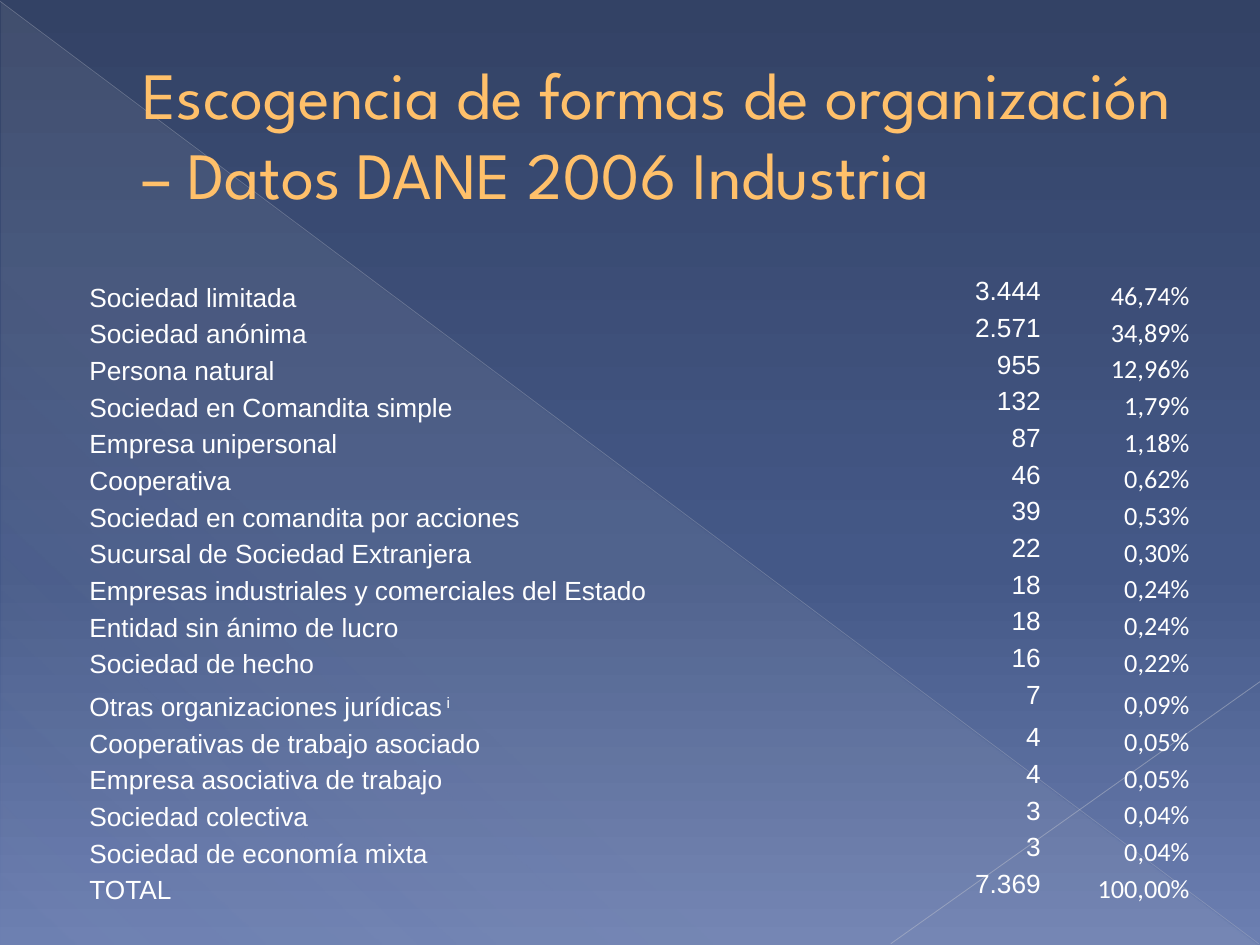
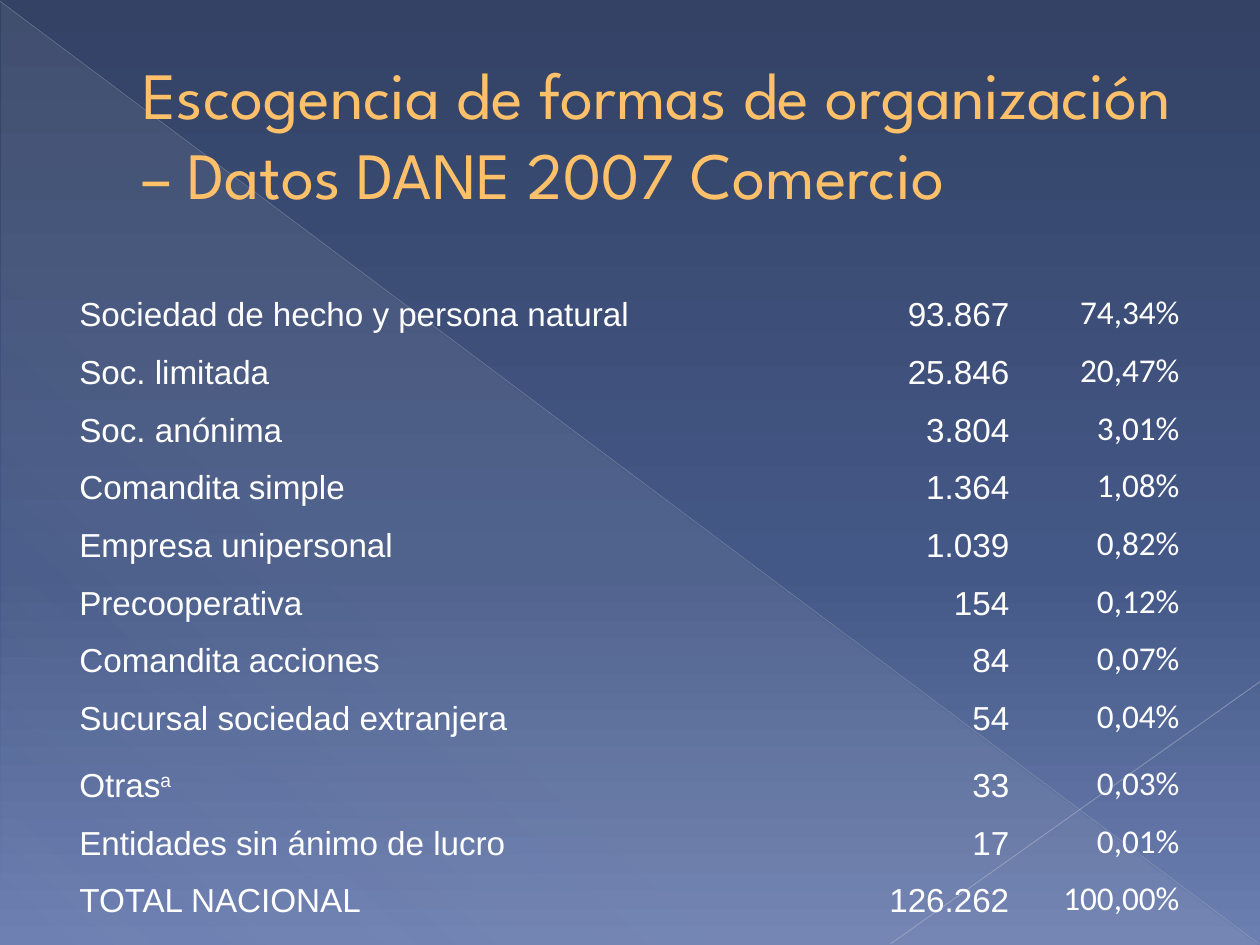
"""Build two slides with tables of Colombian business organization forms."""
import pptx
import pptx.dml.color
import pptx.enum.shapes
import pptx.enum.text
import pptx.oxml
import pptx.oxml.ns
import pptx.util
from pptx.util import Inches

TITLE = "Escogencia de formas de organización – Datos DANE {}"
TITLE_COLOR, TITLE_OUTLINE, TEXT_COLOR = "FFC06A", "A67800", "FFFFFF"
BACKGROUND_STOPS = [(0, "334265", 100), (60, "445887", 100), (100, "6C7FB1", 100)]
TRIANGLE_STOPS = [(0, "D4D4D6", 10), (70, "D4D4D6", 8), (100, "D4D4D6", 1)]
DIAGONALS = [
    ((0, 0.01, 9.99, 7.49), "B9BDC8", 0.39, 35),
    ((10, 5.41, 7.07, 7.49), "C1C4CE", 0.47, 45),
]
PLAIN_TABLE_STYLE = "{2D5ABB26-0587-4C30-8999-92F81FD0307C}"
COLUMN_FONTS = ["Arial", "Arial", "Calibri"]
TOP = pptx.enum.text.MSO_ANCHOR.TOP
BOTTOM = pptx.enum.text.MSO_ANCHOR.BOTTOM

SLIDES = [
    {
        "subject": "2006 Industria",
        "left": 0.7, "height": 5, "tall_row": 0.34, "size": 15,
        "columns": [6.67, 0.9, 1.18], "anchors": [BOTTOM, TOP, BOTTOM],
        "marks": {"Otras organizaciones jurídicas": " i"},
        "rows": [
            ("Sociedad limitada", "3.444", "46,74%"),
            ("Sociedad anónima", "2.571", "34,89%"),
            ("Persona natural", "955", "12,96%"),
            ("Sociedad en Comandita simple", "132", "1,79%"),
            ("Empresa unipersonal", "87", "1,18%"),
            ("Cooperativa", "46", "0,62%"),
            ("Sociedad en comandita por acciones", "39", "0,53%"),
            ("Sucursal de Sociedad Extranjera", "22", "0,30%"),
            ("Empresas industriales y comerciales del Estado", "18", "0,24%"),
            ("Entidad sin ánimo de lucro", "18", "0,24%"),
            ("Sociedad de hecho", "16", "0,22%"),
            ("Otras organizaciones jurídicas", "7", "0,09%"),
            ("Cooperativas de trabajo asociado", "4", "0,05%"),
            ("Empresa asociativa de trabajo", "4", "0,05%"),
            ("Sociedad colectiva", "3", "0,04%"),
            ("Sociedad de economía mixta", "3", "0,04%"),
            ("TOTAL", "7.369", "100,00%"),
        ],
    },
    {
        "subject": "2007 Comercio",
        "left": 0.62, "height": 5.11, "tall_row": 0.53, "size": 19,
        "columns": [5.98, 1.42, 1.35], "anchors": [BOTTOM, BOTTOM, BOTTOM],
        "marks": {"Otras": "a"},
        "rows": [
            ("Sociedad de hecho y persona natural", "93.867", "74,34%"),
            ("Soc. limitada", "25.846", "20,47%"),
            ("Soc. anónima", "3.804", "3,01%"),
            ("Comandita simple", "1.364", "1,08%"),
            ("Empresa unipersonal", "1.039", "0,82%"),
            ("Precooperativa", "154", "0,12%"),
            ("Comandita acciones", "84", "0,07%"),
            ("Sucursal sociedad extranjera", "54", "0,04%"),
            ("Otras", "33", "0,03%"),
            ("Entidades sin ánimo de lucro", "17", "0,01%"),
            ("TOTAL NACIONAL", "126.262", "100,00%"),
        ],
    },
]


def rgb(value):
    return pptx.dml.color.RGBColor.from_string(value)


def element(body):
    head, rest = body.split(">", 1)
    return pptx.oxml.parse_xml(f"{head} {pptx.oxml.ns.nsdecls('a')}>{rest}")


def color_xml(color, opacity):
    return f'<a:srgbClr val="{color}"><a:alpha val="{opacity * 1000}"/></a:srgbClr>'


def set_gradient(fill, parent, stops, angle):
    fill.solid()
    stops_xml = "".join(
        f'<a:gs pos="{position * 1000}">{color_xml(color, opacity)}</a:gs>'
        for position, color, opacity in stops)
    gradient = element(
        f'<a:gradFill rotWithShape="1"><a:gsLst>{stops_xml}</a:gsLst>'
        f'<a:lin ang="{angle * 60000}" scaled="0"/></a:gradFill>')
    solid = parent.find(pptx.oxml.ns.qn("a:solidFill"))
    parent.replace(solid, gradient)


def style_font(font, name, size, color):
    font.name = name
    font.size = pptx.util.Pt(size)
    font.color.rgb = rgb(color)


def add_backdrop(slide):
    fill = slide.background.fill
    set_gradient(fill, slide.element.find(".//" + pptx.oxml.ns.qn("p:bgPr")), BACKGROUND_STOPS, 90)
    triangle = slide.shapes.add_shape(
        pptx.enum.shapes.MSO_SHAPE.RIGHT_TRIANGLE,
        Inches(0.01), Inches(0.02), Inches(9.98), Inches(7.48))
    triangle.shadow.inherit = False
    triangle.line.fill.background()
    set_gradient(triangle.fill, triangle.element.spPr, TRIANGLE_STOPS, 133)
    for ends, color, width, opacity in DIAGONALS:
        diagonal = slide.shapes.add_connector(
            pptx.enum.shapes.MSO_CONNECTOR.STRAIGHT, *map(Inches, ends))
        diagonal.line.width = pptx.util.Pt(width)
        diagonal.line.color.rgb = rgb(color)
        solid = diagonal.line._ln.find(pptx.oxml.ns.qn("a:solidFill"))
        solid[0].append(element(f'<a:alpha val="{opacity * 1000}"></a:alpha>'))
        diagonal.element.spPr.append(element("<a:effectLst></a:effectLst>"))


def add_title(slide, text):
    title = slide.shapes.add_textbox(Inches(0.5), Inches(0.29), Inches(9), Inches(1.53))
    frame = title.text_frame
    frame.word_wrap = True
    frame.vertical_anchor = pptx.enum.text.MSO_ANCHOR.MIDDLE
    paragraph = frame.paragraphs[0]
    paragraph.text = text
    style_font(paragraph.font, "League Spartan", 37.8, TITLE_COLOR)
    properties = paragraph._p.pPr
    properties.set("marL", str(Inches(0.53)))
    properties.set("indent", "0")
    outline = element(
        f'<a:ln w="{pptx.util.Pt(0.5)}"><a:solidFill>{color_xml(TITLE_OUTLINE, 100)}'
        '</a:solidFill></a:ln>')
    properties.find(pptx.oxml.ns.qn("a:defRPr")).insert(0, outline)


def fill_cell(cell, text, mark, font_name, size, anchor, alignment):
    cell.fill.background()
    cell.margin_left = cell.margin_right = cell.margin_top = Inches(0.01)
    cell.margin_bottom = 0
    cell.vertical_anchor = anchor
    paragraph = cell.text_frame.paragraphs[0]
    paragraph.alignment = alignment
    style_font(paragraph.font, font_name, size, TEXT_COLOR)
    paragraph.add_run().text = text
    if mark:
        run = paragraph.add_run()
        run.text = mark
        run._r.get_or_add_rPr().set("baseline", "30000")


def add_forms_table(slide, content):
    rows, columns, marks = content["rows"], content["columns"], content["marks"]
    table = slide.shapes.add_table(
        len(rows), len(columns), Inches(content["left"]), Inches(2.19),
        Inches(sum(columns)), Inches(content["height"])).table
    table.first_row = table.horz_banding = False
    table._tbl.tblPr.find(pptx.oxml.ns.qn("a:tableStyleId")).text = PLAIN_TABLE_STYLE
    for column, width in zip(table.columns, columns):
        column.width = Inches(width)
    row_height = (content["height"] - content["tall_row"]) / (len(rows) - 1)
    for row, values in zip(table.rows, rows):
        row.height = Inches(content["tall_row"] if values[0] in marks else row_height)
        for index, (cell, value) in enumerate(zip(row.cells, values)):
            alignment = pptx.enum.text.PP_ALIGN.RIGHT if index else pptx.enum.text.PP_ALIGN.LEFT
            fill_cell(cell, value, marks.get(value), COLUMN_FONTS[index],
                      content["size"], content["anchors"][index], alignment)


def main():
    presentation = pptx.Presentation()
    presentation.slide_width, presentation.slide_height = Inches(10), Inches(7.5)
    for content in SLIDES:
        slide = presentation.slides.add_slide(presentation.slide_layouts[6])
        add_backdrop(slide)
        add_title(slide, TITLE.format(content["subject"]))
        add_forms_table(slide, content)
    presentation.save("out.pptx")


if __name__ == "__main__":
    main()
